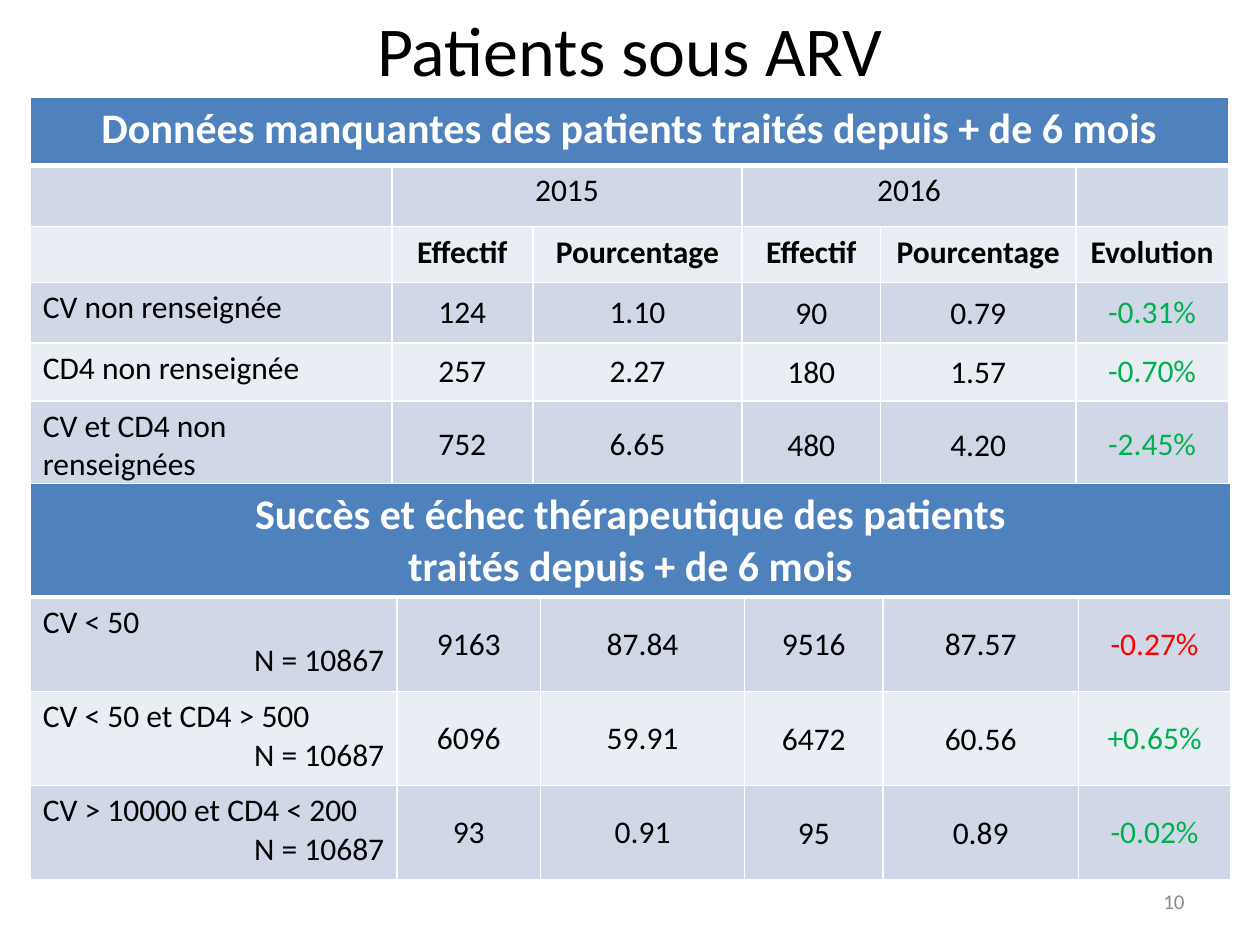
from lxml import etree
from pptx import Presentation
from pptx.dml.color import RGBColor
from pptx.enum import text as t
from pptx.oxml.ns import qn
from pptx.util import Cm, Pt

HUES = {"head": "4F81BD", "dark": "D0D8E8", "light": "E9EDF4", "white": "FFFFFF",
        "black": "000000", "good": "00B050", "bad": "FF0000", "gray": "8C8C8C"}
LEFT, CENTER, RIGHT = t.PP_ALIGN.LEFT, t.PP_ALIGN.CENTER, t.PP_ALIGN.RIGHT
MID, TOP = t.MSO_ANCHOR.MIDDLE, t.MSO_ANCHOR.TOP

# words, box (left, top, width, height), size, hue, align, anchor
TEXTS = [
    ("Patients sous ARV", (0, 0, 25.4, 1.96), 40, "black", CENTER, TOP),
    ("10", (18.21, 17.65, 5.92, 1.02), 12, "gray", RIGHT, MID),
]
MISSING = {
    "top": 1.96,
    "cols": [7.29, 2.84, 4.22, 2.79, 3.94, 3.07],
    "rows": [1.37, 1.24, 1.12, 1.22, 1.17, 1.78],
    "title": "Données manquantes des patients traités depuis + de 6 mois",
    "years": ["", "2015", "", "2016", "", ""],
    "heads": ["", "Effectif", "Pourcentage", "Effectif", "Pourcentage", "Evolution"],
    "data": [
        ("CV non renseignée", "124", "1.10", "90", "0.79", "-0.31%", "good"),
        ("CD4 non renseignée", "257", "2.27", "180", "1.57", "-0.70%", "good"),
        ("CV et CD4 non renseignées", "752", "6.65", "480", "4.20", "-2.45%", "good"),
    ],
}
OUTCOME = {
    "top": 9.75,
    "cols": [7.39, 2.9, 4.11, 2.79, 3.94, 3.07],
    "rows": [2.26, 1.9, 1.9, 1.9],
    "title": "Succès et échec thérapeutique des patients\ntraités depuis + de 6 mois",
    "data": [
        ("CV < 50\nN = 10867", "9163", "87.84", "9516", "87.57", "-0.27%", "bad"),
        ("CV < 50 et CD4 > 500\nN = 10687", "6096", "59.91", "6472", "60.56", "+0.65%", "good"),
        ("CV > 10000 et CD4 < 200\nN = 10687", "93", "0.91", "95", "0.89", "-0.02%", "good"),
    ],
}
TIGHT = {"margin_left": Cm(0.03), "margin_top": Cm(0.03),
         "margin_right": Cm(0.03), "margin_bottom": 0}


def style(frame, align, size, hue, bold=False):
    for para in frame.paragraphs:
        para.alignment = align
        font = para.font
        for run in para.runs:
            font = run.font
            font.color.rgb = RGBColor.from_string(HUES[hue])
        for key, val in {"name": "Calibri", "size": Pt(size), "bold": bold}.items():
            setattr(font, key, val)


def edge(cell, base=1):
    """Draw white borders, the lower one base points wide."""
    props = cell._tc.get_or_add_tcPr()
    for side, width in zip("LRTB", (1, 1, 1, base)):
        line = etree.SubElement(props, qn(f"a:ln{side}"), w=str(Pt(width)))
        fill = etree.SubElement(line, qn("a:solidFill"))
        etree.SubElement(fill, qn("a:srgbClr"), val=HUES["white"])


def paint(cell, hue, base=1):
    edge(cell, base)
    cell.fill.solid()
    cell.fill.fore_color.rgb = RGBColor.from_string(HUES[hue])


def fill_data(cell, col, hue):
    if col == 0:
        style(cell.text_frame, LEFT, 18, "black")
        for para in cell.text_frame.paragraphs[1:]:
            para.alignment = RIGHT
        return
    cell.vertical_anchor = MID
    style(cell.text_frame, CENTER, 18, hue if col == 5 else "black")
    if col in (3, 4):
        for key, val in TIGHT.items():
            setattr(cell, key, val)


def add_grid(slide, part):
    cols, rows = part["cols"], part["rows"]
    grid = slide.shapes.add_table(len(rows), len(cols), Cm(0.61), Cm(part["top"]),
                                  Cm(sum(cols)), Cm(sum(rows))).table
    for col, width in zip(grid.columns, cols):
        col.width = Cm(width)
    for row, height in zip(grid.rows, rows):
        row.height = Cm(height)

    for cell in grid.rows[0].cells:
        paint(cell, "head", 3)
    title = grid.cell(0, 0)
    title.merge(grid.cell(0, 5))
    title.text = part["title"]
    style(title.text_frame, CENTER, 24, "white", True)

    tops = [part[key] for key in ("years", "heads") if key in part]
    for r, words in enumerate(tops + part["data"], 1):
        for c, word in enumerate(words[:6]):
            cell = grid.cell(r, c)
            paint(cell, "dark" if r % 2 else "light")
            cell.text = word
            if r <= len(tops):
                style(cell.text_frame, CENTER, 18, "black", r == 2)
            else:
                fill_data(cell, c, words[6])
    if tops:
        for c in (1, 3):
            grid.cell(1, c).merge(grid.cell(1, c + 1))


def add_text(slide, words, box, size, hue, align, anchor):
    frame = slide.shapes.add_textbox(*map(Cm, box)).text_frame
    frame.word_wrap = True
    frame.vertical_anchor = anchor
    frame.text = words
    style(frame, align, size, hue)


def main():
    deck = Presentation()
    deck.slide_width, deck.slide_height = Cm(25.4), Cm(19.05)
    slide = deck.slides.add_slide(deck.slide_layouts[6])
    for item in TEXTS:
        add_text(slide, *item)
    for part in (MISSING, OUTCOME):
        add_grid(slide, part)
    deck.save("out.pptx")


if __name__ == "__main__":
    main()
